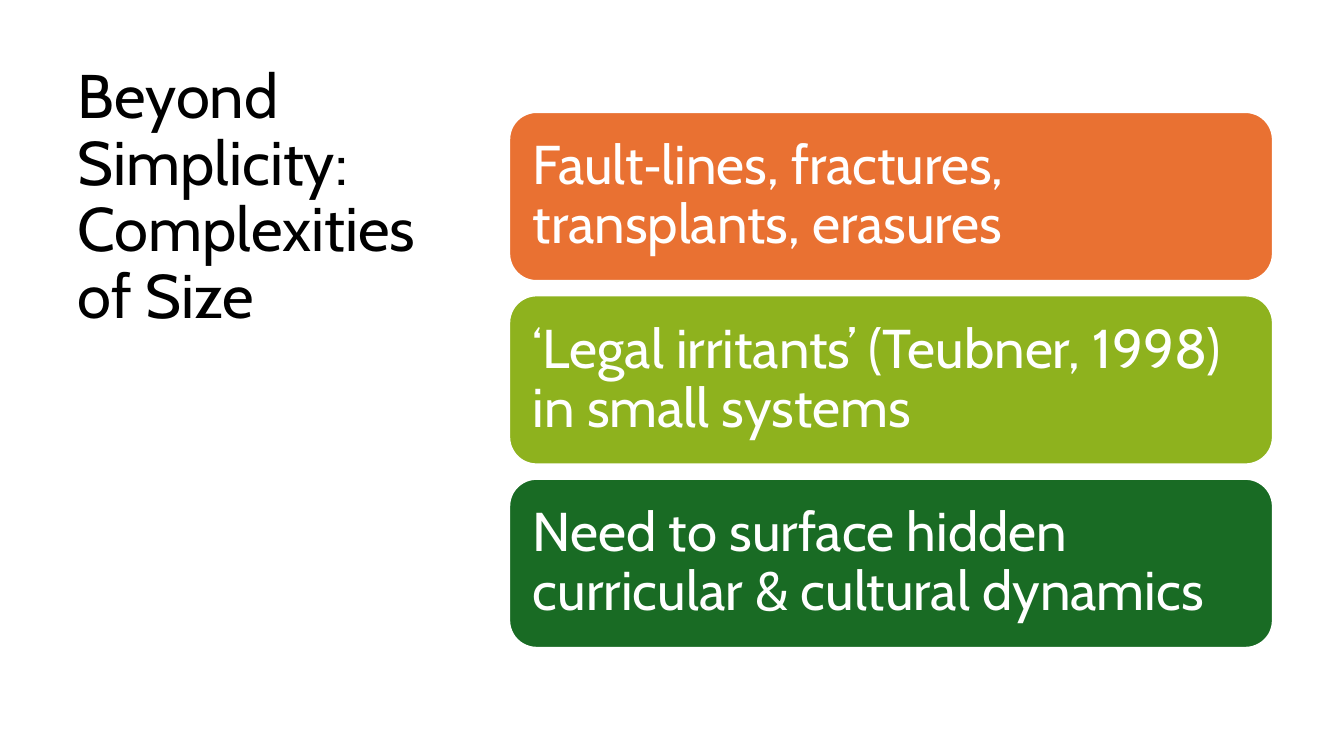
from pptx import Presentation
from pptx.dml.color import RGBColor
from pptx.enum.shapes import MSO_SHAPE
from pptx.enum.text import MSO_ANCHOR, MSO_AUTO_SIZE, PP_ALIGN
from pptx.util import Pt

ROUNDED = MSO_SHAPE.ROUNDED_RECTANGLE
TOP, MIDDLE = MSO_ANCHOR.TOP, MSO_ANCHOR.MIDDLE
NO_FIT = MSO_AUTO_SIZE.NONE
LEFT = PP_ALIGN.LEFT

FONT = "Cabin"
TITLE = "Beyond Simplicity: Complexities of Size"
POINTS = [
    ("Fault‑lines, fractures, transplants, erasures", "E97132"),
    ("‘Legal irritants’ (Teubner, 1998) in small systems", "8EB21E"),
    ("Need to surface hidden curricular & cultural dynamics", "196B24"),
]
CARD_LEFT, CARD_TOP, CARD_WIDTH, CARD_HEIGHT = 362.9, 79.2, 547.2, 122.4
CARD_PITCH = 131


def color(value):
    return RGBColor.from_string(value)


def set_attrs(obj, values):
    for name, value in values.items():
        setattr(obj, name, value)


def write_text(tf, text, size, text_color, anchor, margins):
    """Fill a text frame; margins are horizontal and vertical, in points."""
    side, end = map(Pt, margins)
    set_attrs(tf, {
        "word_wrap": True, "auto_size": NO_FIT, "vertical_anchor": anchor,
        "margin_left": side, "margin_right": side,
        "margin_top": end, "margin_bottom": end,
    })
    p = tf.paragraphs[0]
    set_attrs(p, {"alignment": LEFT, "line_spacing": 0.9})
    r = p.add_run()
    r.text = text
    set_attrs(r.font, {"name": FONT, "size": Pt(size)})
    r.font.color.rgb = color(text_color)


def add_title(s):
    sp = s.shapes.title
    set_attrs(sp, {"left": Pt(48.2), "top": Pt(43.2),
                   "width": Pt(275), "height": Pt(455.8)})
    write_text(sp.text_frame, TITLE, 44, "000000", TOP, (7.2, 3.6))


def add_card(s, top, text, fill):
    sp = s.shapes.add_shape(ROUNDED, Pt(CARD_LEFT), Pt(top),
                            Pt(CARD_WIDTH), Pt(CARD_HEIGHT))
    sp.shadow.inherit = False
    sp.fill.solid()
    sp.fill.fore_color.rgb = color(fill)
    sp.line.color.rgb = color("FFFFFF")
    sp.line.width = Pt(3.15)
    write_text(sp.text_frame, text, 39, "FFFFFF", MIDDLE, (11.7, 11.7))


def main():
    prs = Presentation()
    set_attrs(prs, {"slide_width": Pt(960), "slide_height": Pt(540)})
    s = prs.slides.add_slide(prs.slide_layouts[5])
    add_title(s)
    for i, (text, fill) in enumerate(POINTS):
        add_card(s, CARD_TOP + i * CARD_PITCH, text, fill)
    prs.save("out.pptx")


if __name__ == "__main__":
    main()
